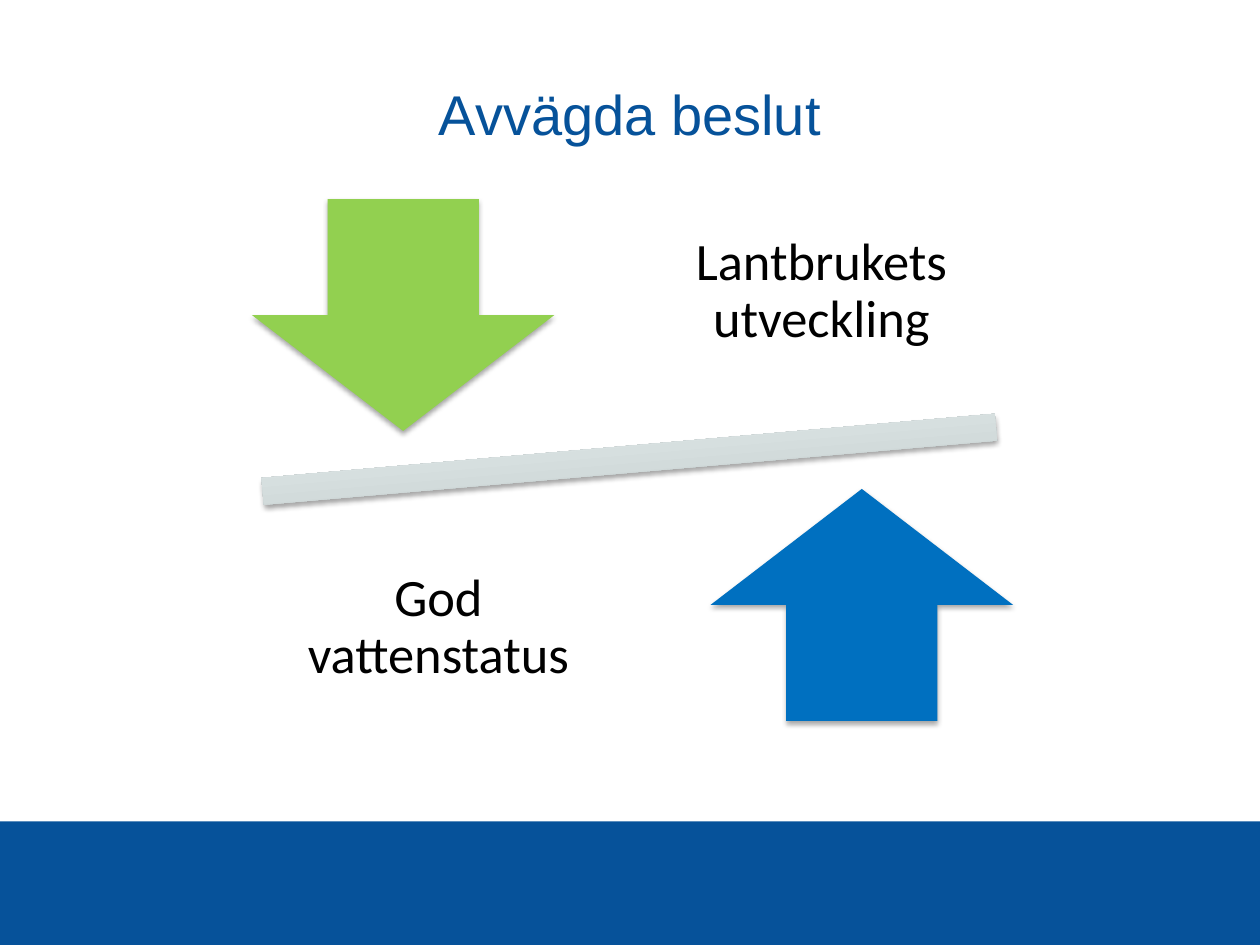
from dataclasses import dataclass
from lxml.etree import SubElement
from pptx import Presentation
from pptx.dml.color import RGBColor
from pptx.enum.shapes import MSO_SHAPE
from pptx.enum.text import MSO_ANCHOR, PP_ALIGN
from pptx.oxml.ns import qn
from pptx.util import Pt


@dataclass(frozen=True)
class Theme:
    navy: str = "06529A"
    green: str = "92D050"
    blue: str = "0070C0"
    black: str = "000000"
    bar_dark: str = "B3BABA"
    bar_light: str = "E8F1F2"
    title_font: str = "Arial"
    label_font: str = "Calibri"
    title_size: int = 32
    label_size: int = 30


class BalanceSlide:
    def __init__(self, page, theme):
        self.page = page
        self.theme = theme

    def shape(self, kind, left, top, width, height, color=None):
        shape = self.page.shapes.add_shape(kind, Pt(left), Pt(top), Pt(width), Pt(height))
        shape.shadow.inherit = False
        shape.line.fill.background()
        if color:
            shape.fill.solid()
            shape.fill.fore_color.rgb = RGBColor.from_string(color)
        return shape

    def soft_shadow(self, shape):
        effects = shape._element.spPr.find(qn("a:effectLst"))
        shadow = SubElement(effects, qn("a:outerShdw"), blurRad=str(Pt(3.1)),
                            dist=str(Pt(1.8)), dir="5400000", rotWithShape="0")
        color = SubElement(shadow, qn("a:srgbClr"), val=self.theme.black)
        SubElement(color, qn("a:alpha"), val="35000")

    def arrow(self, kind, left, top, color):
        self.soft_shadow(self.shape(kind, left, top, 172.8, 132.5, color))

    def beam(self, left, top, width, height, angle):
        beam = self.shape(MSO_SHAPE.MATH_MINUS, left, top, width, height)
        beam.rotation = angle
        beam.fill.gradient()
        beam.fill.gradient_angle = 90
        stops = ((0, self.theme.bar_dark), (0.8, self.theme.bar_light))
        for stop, (position, color) in zip(beam.fill.gradient_stops, stops):
            stop.position = position
            stop.color.rgb = RGBColor.from_string(color)
        self.soft_shadow(beam)

    def text(self, words, left, top, width, height, font, size, color, insets, spacing=1.0):
        box = self.page.shapes.add_textbox(Pt(left), Pt(top), Pt(width), Pt(height))
        frame = box.text_frame
        frame.word_wrap = True
        frame.vertical_anchor = MSO_ANCHOR.MIDDLE
        (frame.margin_left, frame.margin_top,
         frame.margin_right, frame.margin_bottom) = map(Pt, insets)
        frame.text = words
        para = frame.paragraphs[0]
        para.alignment = PP_ALIGN.CENTER
        para.line_spacing = spacing
        span = para.runs[0]
        span.font.name = font
        span.font.size = Pt(size)
        span.font.color.rgb = RGBColor.from_string(color)

    def title(self, words):
        theme = self.theme
        self.text(words, 72, 39.6, 576, 57.6, theme.title_font, theme.title_size,
                  theme.navy, (7.2, 3.6, 7.2, 10.8))

    def label(self, words, left, top):
        theme = self.theme
        self.text(words, left, top, 184.3, 139, theme.label_font, theme.label_size,
                  theme.black, (16.6,) * 4, 0.9)


def main():
    deck = Presentation()
    deck.slide_width, deck.slide_height = Pt(720), Pt(540)
    theme = Theme()
    slide = BalanceSlide(deck.slides.add_slide(deck.slide_layouts[6]), theme)

    # Footer band and title
    slide.shape(MSO_SHAPE.RECTANGLE, 0, 469.4, 720, 70.6, theme.navy)
    slide.title("Avvägda beslut")

    # Tilted beam
    slide.beam(73.4, 229.7, 572.4, 65.5, 355)

    # Opposing arrows with their labels
    slide.arrow(MSO_SHAPE.DOWN_ARROW, 144, 113.8, theme.green)
    slide.label("Lantbrukets utveckling", 377.3, 97.2)
    slide.arrow(MSO_SHAPE.UP_ARROW, 406.1, 279.4, theme.blue)
    slide.label("God vattenstatus", 158.4, 289.4)

    deck.save("out.pptx")


if __name__ == "__main__":
    main()
